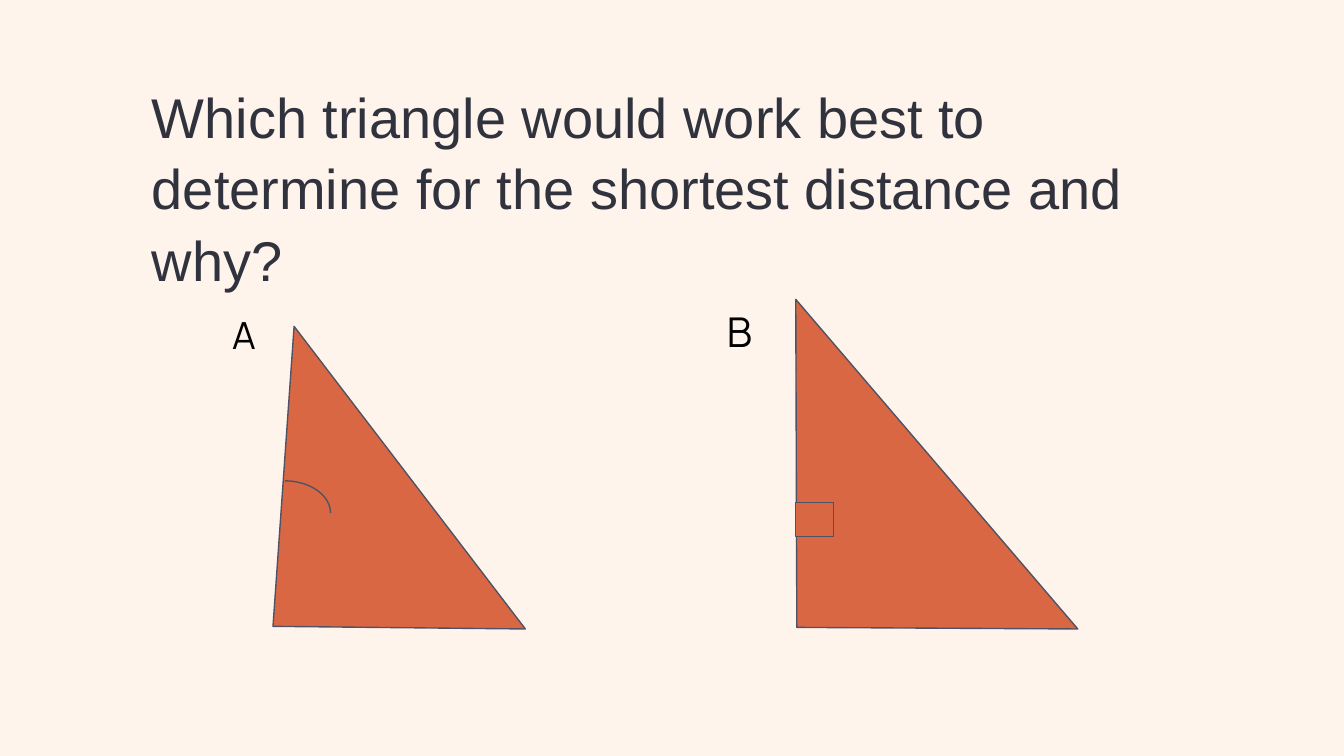
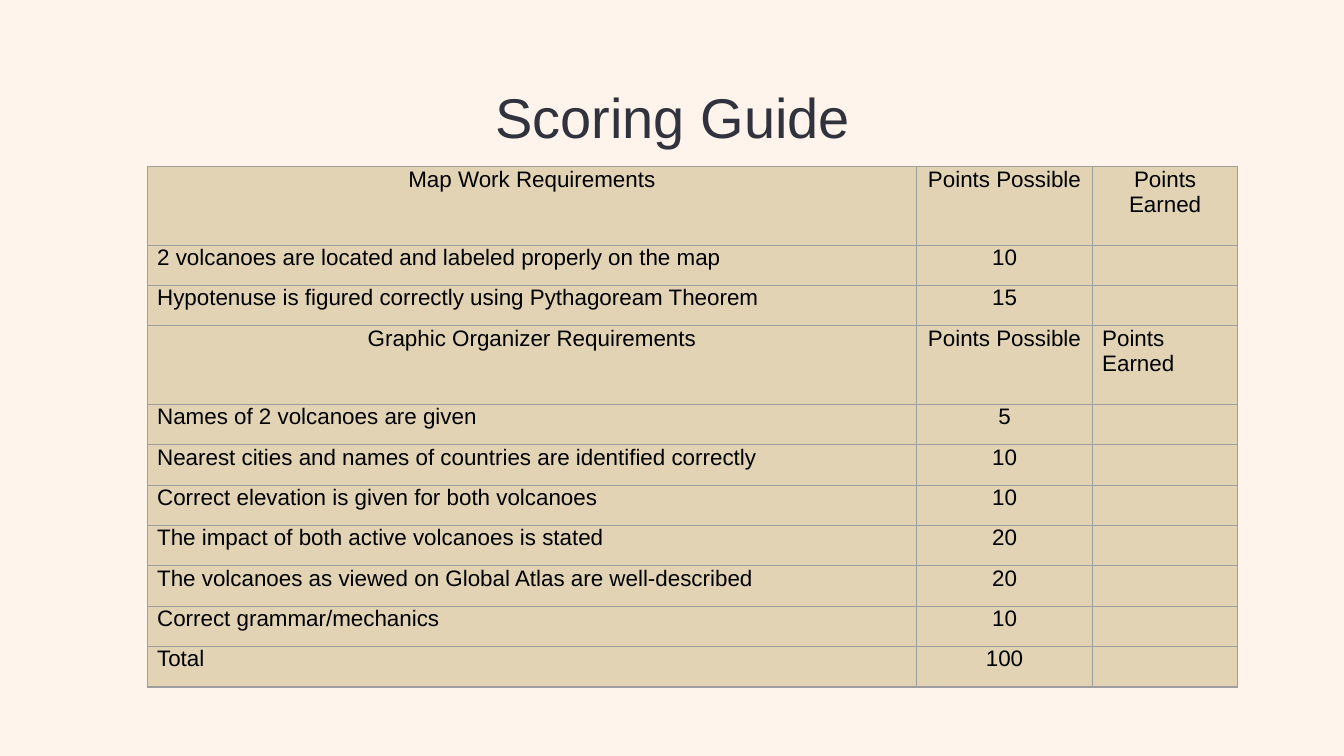
import pptx
import pptx.dml.color
import pptx.enum.shapes
import pptx.enum.text
import pptx.oxml
import pptx.oxml.ns
import pptx.util

Cm = pptx.util.Cm
Pt = pptx.util.Pt
Align = pptx.enum.text.PP_ALIGN
Shape = pptx.enum.shapes.MSO_SHAPE

COLORS = {
    "background": "FFF4EC",
    "title": "30333D",
    "text": "000000",
    "triangle": "DA6743",
    "outline": "4D5364",
    "cell": "E2D3B5",
    "border": "9E9E9E",
}
INSET = 0.25
TITLE_TOP = 1.24
HEADINGS = ("Map Work Requirements", "Graphic Organizer Requirements")
SCORING = [
    ("Map Work Requirements", "Points Possible", "Points Earned"),
    ("2 volcanoes are located and labeled properly on the map", "10", ""),
    ("Hypotenuse is figured correctly using Pythagoream Theorem", "15", ""),
    ("Graphic Organizer Requirements", "Points Possible", "Points Earned"),
    ("Names of 2 volcanoes are given", "5", ""),
    ("Nearest cities and names of countries are identified correctly", "10", ""),
    ("Correct elevation is given for both volcanoes", "10", ""),
    ("The impact of both active volcanoes is stated", "20", ""),
    ("The volcanoes as viewed on Global Atlas are well-described", "20", ""),
    ("Correct grammar/mechanics", "10", ""),
    ("Total", "100", ""),
]


def rgb(name):
    return pptx.dml.color.RGBColor.from_string(COLORS[name])


def write(frame, text, size=12, font="Arial", color="text", align=Align.LEFT, spacing=None):
    paragraph = frame.paragraphs[0]
    paragraph.alignment = align
    if spacing:
        paragraph.line_spacing = spacing
    run = paragraph.add_run()
    run.text = text
    run.font.size = Pt(size)
    run.font.name = font
    run.font.bold = False
    run.font.color.rgb = rgb(color)


def add_borders(cell):
    properties = cell._tc.get_or_add_tcPr()
    for position, side in enumerate("LRTB"):
        properties.insert(position, pptx.oxml.parse_xml(
            f'<a:ln{side} {pptx.oxml.ns.nsdecls("a")} w="{Pt(0.75)}"><a:solidFill>'
            f'<a:srgbClr val="{COLORS["border"]}"/></a:solidFill></a:ln{side}>'))


class Deck:
    def __init__(self):
        self.presentation = pptx.Presentation()
        self.presentation.slide_width = Cm(25.4)
        self.presentation.slide_height = Cm(14.29)
        self.slide = None

    def new_slide(self):
        self.slide = self.presentation.slides.add_slide(self.presentation.slide_layouts[6])
        fill = self.slide.background.fill
        fill.solid()
        fill.fore_color.rgb = rgb("background")

    def text(self, content, left, top, width, height, **style):
        frame = self.slide.shapes.add_textbox(Cm(left), Cm(top), Cm(width), Cm(height)).text_frame
        frame.word_wrap = True
        frame.margin_left = frame.margin_right = Cm(INSET)
        frame.margin_top = frame.margin_bottom = Cm(INSET)
        write(frame, content, **style)

    def title(self, content, left, width, height, align=Align.LEFT):
        self.text(content, left, TITLE_TOP, width, height,
                  size=30, color="title", align=align, spacing=1.06)

    def outline(self, shape, filled=True):
        shape.shadow.inherit = False
        if filled:
            shape.fill.solid()
            shape.fill.fore_color.rgb = rgb("triangle")
        else:
            shape.fill.background()
        shape.line.color.rgb = rgb("outline")
        shape.line.width = Pt(0.75)

    def triangle(self, *corners):
        start, *others = [(Cm(x), Cm(y)) for x, y in corners]
        builder = self.slide.shapes.build_freeform(*start)
        builder.add_line_segments(others)
        self.outline(builder.convert_to_shape())

    def angle_mark(self, kind, left, top, width, height, filled):
        mark = self.slide.shapes.add_shape(kind, Cm(left), Cm(top), Cm(width), Cm(height))
        self.outline(mark, filled)

    def scoring_table(self, rows, left, top, widths, height):
        """Heading rows take two units of height, all others one."""
        units = [2 if row[0] in HEADINGS else 1 for row in rows]
        table = self.slide.shapes.add_table(
            len(rows), len(widths), Cm(left), Cm(top), Cm(sum(widths)), Cm(height)).table
        table.first_row = table.horz_banding = False
        for column, width in zip(table.columns, widths):
            column.width = Cm(width)
        for r, row in enumerate(rows):
            table.rows[r].height = Cm(height * units[r] / sum(units))
            for c, content in enumerate(row):
                cell = table.cell(r, c)
                cell.margin_left = cell.margin_right = Cm(0.18)
                cell.margin_top = cell.margin_bottom = 0
                cell.fill.solid()
                cell.fill.fore_color.rgb = rgb("cell")
                add_borders(cell)
                centred = c == 1 or r == 0 or (c == 0 and row[0] in HEADINGS)
                write(cell.text_frame, content, align=Align.CENTER if centred else Align.LEFT)


def main():
    deck = Deck()

    deck.new_slide()
    deck.title("Which triangle would work best to determine for the shortest distance and why?",
               2.62, 20.8, 4.27)
    deck.triangle((5.56, 6.17), (9.93, 11.89), (5.16, 11.84))
    deck.triangle((15.04, 5.66), (15.06, 11.86), (20.37, 11.89))
    deck.angle_mark(Shape.RECTANGLE, 15.04, 9.5, 0.71, 0.64, filled=True)
    deck.angle_mark(Shape.ARC, 4.52, 9.09, 1.73, 1.22, filled=False)
    deck.text("A", 4.14, 5.66, 1.4, 1.37, size=20, font="Manrope")
    deck.text("B", 13.49, 5.54, 1.4, 1.5, size=22, font="Manrope")

    deck.new_slide()
    deck.title("Scoring Guide", 2.01, 21.41, 1.6, align=Align.CENTER)
    deck.scoring_table(SCORING, 2.79, 3.15, (14.53, 3.33, 2.74), 9.65)

    deck.presentation.save("out.pptx")


if __name__ == "__main__":
    main()
